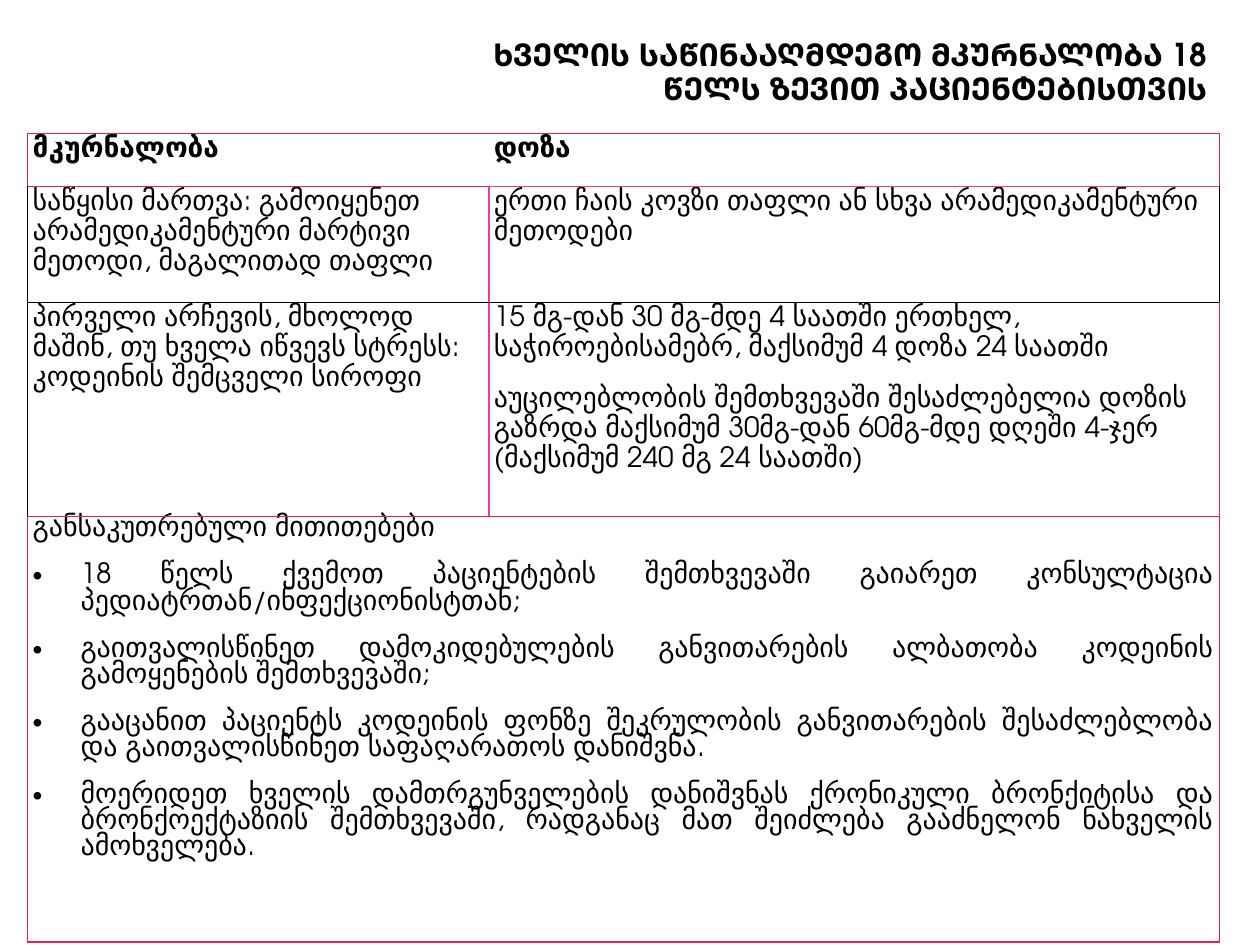
from dataclasses import dataclass

from lxml import etree
from pptx import Presentation
from pptx.dml.color import RGBColor
from pptx.enum.text import MSO_ANCHOR, PP_ALIGN
from pptx.oxml.ns import qn
from pptx.util import Inches, Pt

LEFT, RIGHT, JUSTIFY = PP_ALIGN.LEFT, PP_ALIGN.RIGHT, PP_ALIGN.JUSTIFY
MIDDLE = MSO_ANCHOR.MIDDLE
FONT = "TeX Gyre Adventor"
BLACK, WHITE, RED, PINK = "000000", "FFFFFF", "E5224E", "F63892"
WIDTH, HEIGHT = 10, 7.5
COLS = (3.66, 5.8)
ROWS = (0.42, 0.88, 1.66, 3.38)
TABLE_LEFT, TABLE_TOP = 0.22, 1.06
TABLE_RIGHT = TABLE_LEFT + sum(COLS)
INDENT = 0.38
TITLE = "ᲮᲕᲔᲚᲘᲡ ᲡᲐᲬᲘᲜᲐᲐᲦᲛᲓᲔᲒᲝ ᲛᲙᲣᲠᲜᲐᲚᲝᲑᲐ 18 ᲬᲔᲚᲡ ᲖᲔᲕᲘᲗ ᲞᲐᲪᲘᲔᲜᲢᲔᲑᲘᲡᲗᲕᲘᲡ"


@dataclass
class CellSpec:
    """Text of one cell and its left, right, top and bottom line colours."""
    row: int
    col: int
    lines: tuple[str, ...]
    borders: tuple[str | None, str | None, str | None, str | None]
    bold: bool = False
    bullets: tuple[str, ...] = ()
    align: PP_ALIGN = LEFT
    spacing: float = 1.15


CELLS = (
    CellSpec(0, 0, ("მკურნალობა",), (RED, None, RED, RED), bold=True),
    CellSpec(0, 1, ("დოზა",), (None, RED, RED, PINK), bold=True),
    CellSpec(1, 0, ("საწყისი მართვა: გამოიყენეთ არამედიკამენტური მარტივი მეთოდი, "
                    "მაგალითად თაფლი",), (BLACK, PINK, RED, BLACK)),
    CellSpec(1, 1, ("ერთი ჩაის კოვზი თაფლი ან სხვა არამედიკამენტური მეთოდები",),
             (PINK, BLACK, PINK, BLACK)),
    CellSpec(2, 0, ("პირველი არჩევის, მხოლოდ მაშინ, თუ ხველა იწვევს სტრესს: "
                    "კოდეინის შემცველი სიროფი",), (BLACK, PINK, BLACK, RED)),
    CellSpec(2, 1, ("15 მგ-დან 30 მგ-მდე 4 საათში ერთხელ, საჭიროებისამებრ, "
                    "მაქსიმუმ 4 დოზა 24 საათში",
                    "აუცილებლობის შემთხვევაში შესაძლებელია დოზის გაზრდა მაქსიმუმ "
                    "30მგ-დან 60მგ-მდე დღეში 4-ჯერ (მაქსიმუმ 240 მგ 24 საათში)"),
             (PINK, RED, BLACK, RED)),
    CellSpec(3, 0, ("განსაკუთრებული მითითებები",), (RED, RED, RED, RED),
             align=JUSTIFY, spacing=1.0, bullets=(
        "18 წელს ქვემოთ პაციენტების შემთხვევაში გაიარეთ კონსულტაცია "
        "პედიატრთან/ინფექციონისტთან;",
        "გაითვალისწინეთ დამოკიდებულების განვითარების ალბათობა კოდეინის "
        "გამოყენების შემთხვევაში;",
        "გააცანით პაციენტს კოდეინის ფონზე შეკრულობის განვითარების შესაძლებლობა "
        "და გაითვალისწინეთ საფაღარათოს დანიშვნა.",
        "მოერიდეთ ხველის დამთრგუნველების დანიშვნას ქრონიკული ბრონქიტისა და "
        "ბრონქოექტაზიის შემთხვევაში, რადგანაც მათ შეიძლება გააძნელონ ნახველის "
        "ამოხველება.")),
)


def rgb(value: str) -> RGBColor:
    """Turn a hex string into a colour."""
    return RGBColor.from_string(value)


def write(p, text: str, size: float, bold: bool, align: PP_ALIGN, spacing: float) -> None:
    """Fill a paragraph with one formatted run."""
    p.text = text
    p.alignment, p.line_spacing = align, spacing
    font = p.runs[0].font
    font.name, font.size, font.bold = FONT, Pt(size), bold
    font.color.rgb = rgb(BLACK)


def add_bullet(p) -> None:
    """Give a paragraph a hanging round bullet."""
    pPr = p._p.get_or_add_pPr()
    pPr.set("marL", str(Inches(INDENT)))
    pPr.set("indent", str(-Inches(INDENT)))
    etree.SubElement(pPr, qn("a:buFont")).set("typeface", "Arial")
    etree.SubElement(pPr, qn("a:buChar")).set("char", "•")


def set_borders(cell, colours: tuple[str | None, ...]) -> None:
    """Draw the four cell lines ahead of the cell's fill."""
    tcPr = cell._tc.get_or_add_tcPr()
    for i, (side, colour) in enumerate(zip("LRTB", colours)):
        ln = etree.Element(qn(f"a:ln{side}"), w=str(Pt(0.5 if colour == BLACK else 1)))
        if colour:
            fill = etree.SubElement(ln, qn("a:solidFill"))
            etree.SubElement(fill, qn("a:srgbClr")).set("val", colour)
        else:
            etree.SubElement(ln, qn("a:noFill"))
        tcPr.insert(i, ln)


def fill_cell(cell, spec: CellSpec) -> None:
    """Write a cell's paragraphs, fill and lines."""
    cell.margin_left = cell.margin_right = Inches(0.04)
    cell.margin_top = cell.margin_bottom = 0
    cell.fill.solid()
    cell.fill.fore_color.rgb = rgb(WHITE)
    set_borders(cell, spec.borders)
    tf = cell.text_frame
    for i, text in enumerate(spec.lines + spec.bullets):
        p = tf.add_paragraph() if i else tf.paragraphs[0]
        write(p, text, 16, spec.bold, spec.align, spec.spacing)
        p.space_before, p.space_after = Pt(6 if i else 0), Pt(6)
        if i >= len(spec.lines):
            add_bullet(p)


def add_title(s) -> None:
    """Add the right-aligned heading above the table."""
    left, top, height = 0.353 * WIDTH, 0.04 * HEIGHT, 0.076 * HEIGHT
    sp = s.shapes.add_textbox(Inches(left), Inches(top),
                              Inches(TABLE_RIGHT - left), Inches(height))
    tf = sp.text_frame
    tf.word_wrap, tf.vertical_anchor = True, MIDDLE
    write(tf.paragraphs[0], TITLE, 18, True, RIGHT, 0.9)


def add_treatment_table(s) -> None:
    """Add the table of treatments, doses and special instructions."""
    table = s.shapes.add_table(len(ROWS), len(COLS), Inches(TABLE_LEFT), Inches(TABLE_TOP),
                               Inches(sum(COLS)), Inches(sum(ROWS))).table
    table.first_row = table.horz_banding = False
    for column, width in zip(table.columns, COLS):
        column.width = Inches(width)
    for row, height in zip(table.rows, ROWS):
        row.height = Inches(height)
    table.cell(3, 0).merge(table.cell(3, 1))
    for spec in CELLS:
        fill_cell(table.cell(spec.row, spec.col), spec)
    set_borders(table.cell(3, 1), CELLS[-1].borders)


def main() -> None:
    """Build and save the slide."""
    prs = Presentation()
    prs.slide_width, prs.slide_height = Inches(WIDTH), Inches(HEIGHT)
    s = prs.slides.add_slide(prs.slide_layouts[6])
    add_title(s)
    add_treatment_table(s)
    prs.save("out.pptx")


if __name__ == "__main__":
    main()
